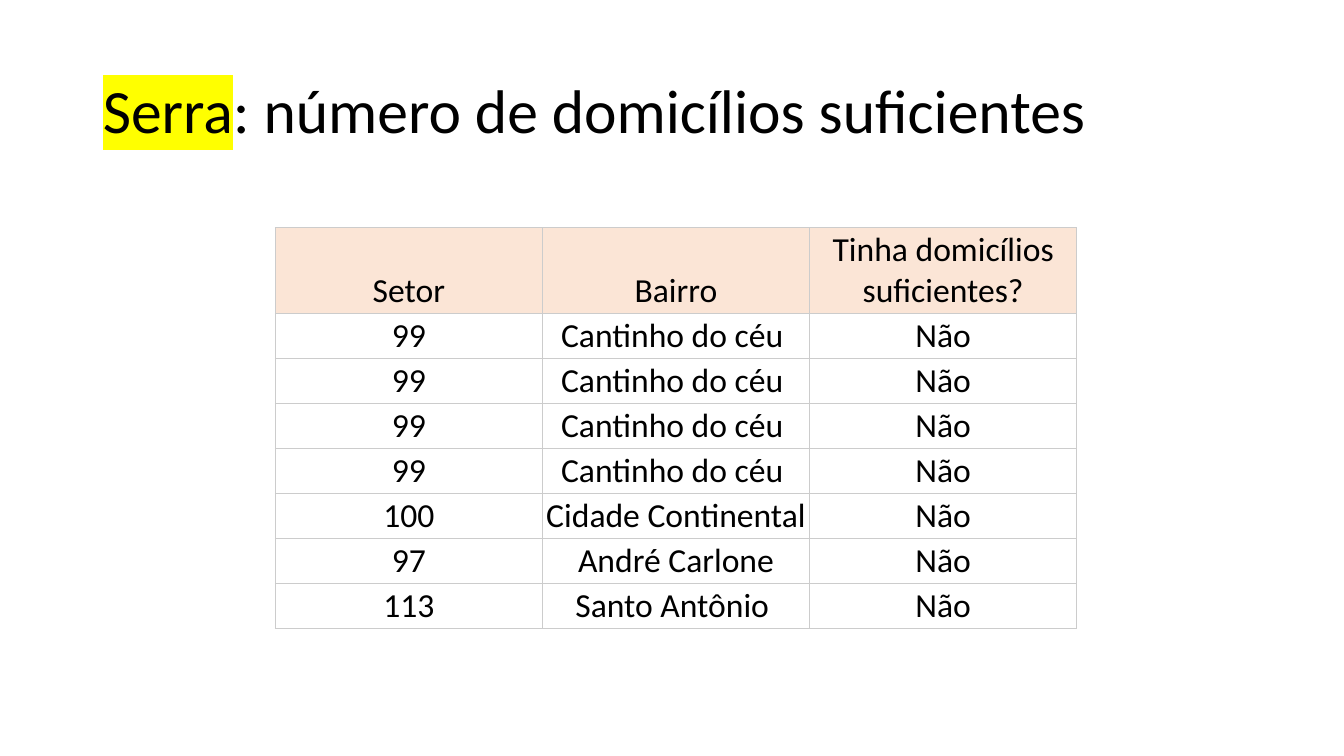
import pptx
import pptx.dml.color
import pptx.enum.text
import pptx.oxml
import pptx.oxml.ns
import pptx.util

TITLE = [("Serra", "FFFF00"), (": número de domicílios suficientes", None)]
HEADER = ("Setor", "Bairro", "Tinha domicílios suficientes?")
SECTORS = [("99", "Cantinho do céu ", "Não")] * 4 + [
    ("100", "Cidade Continental", "Não"),
    ("97", "André Carlone", "Não"),
    ("113", "Santo Antônio ", "Não"),
]

FONT = "Calibri"
TEXT, HEADER_FILL, BORDER = "000000", "FBE5D6", "CCCCCC"
COLUMN_WIDTH, HEADER_HEIGHT, ROW_HEIGHT = 2.65, 0.85, 0.44
TABLE_LEFT, TABLE_TOP = 2.73, 2.26

inches = pptx.util.Inches
anchors = pptx.enum.text.MSO_ANCHOR
aligns = pptx.enum.text.PP_ALIGN


def color(value):
    return pptx.dml.color.RGBColor.from_string(value)


def format_paragraph(para, size, align):
    para.alignment = align
    para.font.name = FONT
    para.font.size = pptx.util.Pt(size)
    para.font.bold = False
    para.font.color.rgb = color(TEXT)


def highlight(span, value):
    span._r.get_or_add_rPr().append(pptx.oxml.parse_xml(
        f'<a:highlight {pptx.oxml.ns.nsdecls("a")}>'
        f'<a:srgbClr val="{value}"/></a:highlight>'))


def add_borders(cell):
    properties = cell._tc.get_or_add_tcPr()
    for position, side in enumerate(("lnL", "lnR", "lnT", "lnB")):
        properties.insert(position, pptx.oxml.parse_xml(
            f'<a:{side} {pptx.oxml.ns.nsdecls("a")} w="{pptx.util.Pt(0.75)}">'
            f'<a:solidFill><a:srgbClr val="{BORDER}"/></a:solidFill></a:{side}>'))


def fill_title(title):
    title.left, title.top = inches(0.92), inches(0.4)
    title.width, title.height = inches(11.5), inches(1.45)
    frame = title.text_frame
    frame.word_wrap = True
    frame.auto_size = pptx.enum.text.MSO_AUTO_SIZE.NONE
    frame.vertical_anchor = anchors.MIDDLE
    para = frame.paragraphs[0]
    para.line_spacing = 0.9
    format_paragraph(para, 44, aligns.LEFT)
    for words, marker in TITLE:
        span = para.add_run()
        span.text = words
        if marker:
            highlight(span, marker)


def fill_cell(cell, words, is_header):
    cell.text = words
    cell.vertical_anchor = anchors.BOTTOM
    cell.margin_left = cell.margin_right = inches(0.03)
    cell.margin_top = cell.margin_bottom = inches(0.02)
    format_paragraph(cell.text_frame.paragraphs[0], 24, aligns.CENTER)
    if is_header:
        cell.fill.solid()
        cell.fill.fore_color.rgb = color(HEADER_FILL)
    else:
        cell.fill.background()
    add_borders(cell)


def add_sector_table(page):
    rows = [HEADER] + SECTORS
    heights = [HEADER_HEIGHT] + [ROW_HEIGHT] * len(SECTORS)
    table = page.shapes.add_table(
        len(rows), len(HEADER), inches(TABLE_LEFT), inches(TABLE_TOP),
        inches(COLUMN_WIDTH * len(HEADER)), inches(sum(heights))).table
    table.horz_banding = False
    for row_index, (row, height) in enumerate(zip(rows, heights)):
        table.rows[row_index].height = inches(height)
        for column_index, words in enumerate(row):
            fill_cell(table.cell(row_index, column_index), words, row_index == 0)


def main():
    deck = pptx.Presentation()
    deck.slide_width, deck.slide_height = inches(13.33), inches(7.5)
    page = deck.slides.add_slide(deck.slide_layouts.get_by_name("Title Only"))
    fill_title(page.shapes.title)
    add_sector_table(page)
    deck.save("out.pptx")


if __name__ == "__main__":
    main()
